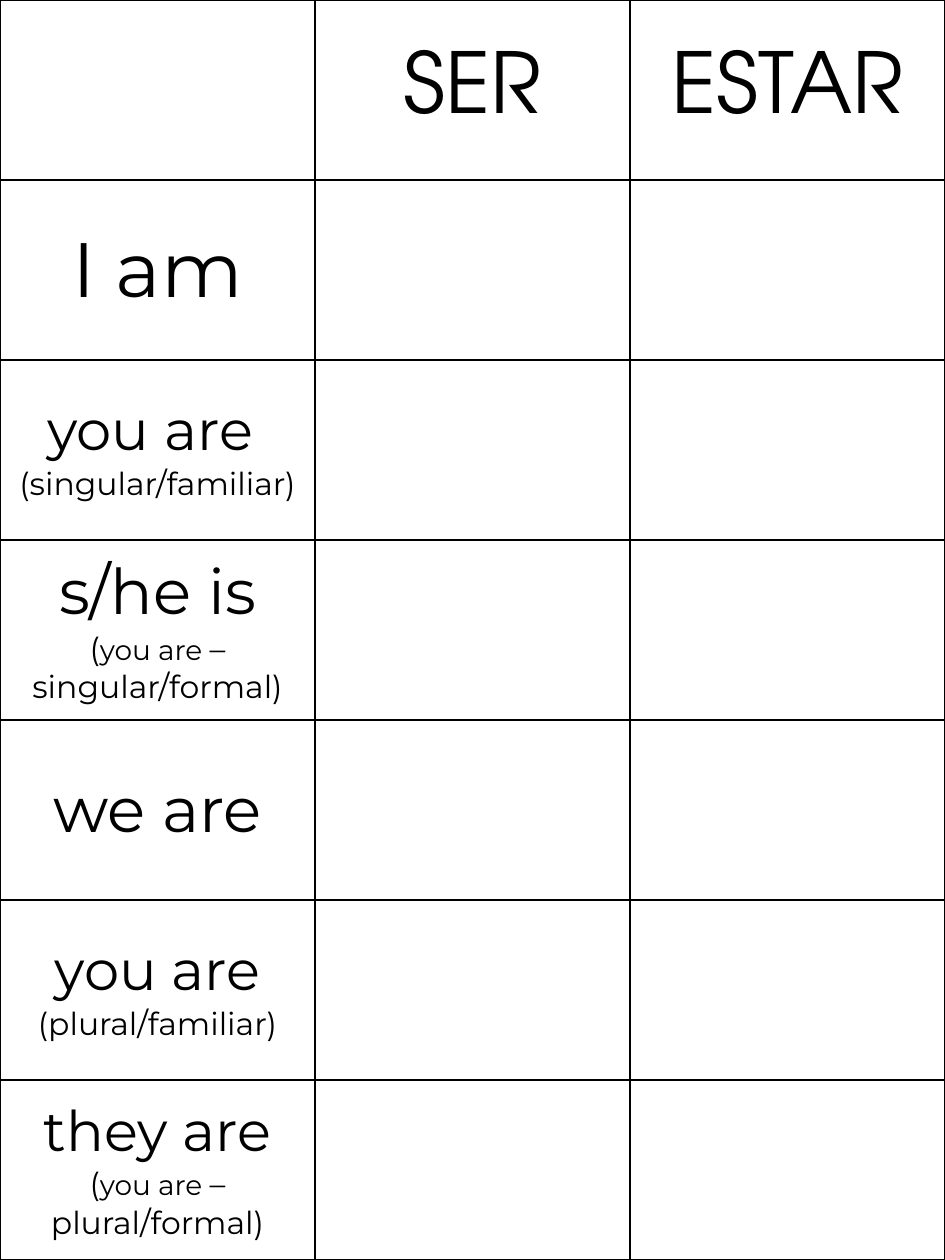
from dataclasses import dataclass

from lxml.etree import SubElement
from pptx import Presentation
from pptx.dml.color import RGBColor
from pptx.enum.text import MSO_ANCHOR as Anchor, PP_ALIGN as Align
from pptx.oxml.ns import qn
from pptx.util import Emu, Pt

SCALE = 914400 / 126
WIDTH, HEIGHT = 945, 1260
COLS, ROWS = 3, 7
BLACK = RGBColor(0, 0, 0)
HEAD_FONT, BODY_FONT = "TeX Gyre Adventor", "Montserrat"


@dataclass(frozen=True)
class Part:
    text: str
    size: int


@dataclass(frozen=True)
class Label:
    row: int
    col: int
    font: str
    lines: tuple[tuple[Part, ...], ...]


def px(count: int) -> Emu:
    return Emu(round(count * SCALE))


def title(col: int, text: str) -> Label:
    return Label(0, col, HEAD_FONT, ((Part(text, 48),),))


def person(row: int, text: str, size: int, *note: Part) -> Label:
    lines = ((Part(text, size),),)
    return Label(row, 0, BODY_FONT, lines + ((note,) if note else ()))


def formal(number: str) -> tuple[Part, ...]:
    return Part("(", 18), Part("you are ", 16), Part(f"– {number}/formal)", 18)


LABELS = [
    title(1, "SER"),
    title(2, "ESTAR"),
    person(1, "I am", 44),
    person(2, "you are ", 32, Part("(singular/familiar)", 18)),
    person(3, "s/he is", 36, *formal("singular")),
    person(4, "we are", 36),
    person(5, "you are", 32, Part("(plural/familiar)", 18)),
    person(6, "they are", 32, *formal("plural")),
]


def frame(cell) -> None:
    """Give the cell thin black borders and no fill."""
    props = cell._tc.get_or_add_tcPr()
    for side in ("lnL", "lnR", "lnT", "lnB"):
        line = SubElement(props, qn(f"a:{side}"), w=str(Pt(1)))
        fill = SubElement(line, qn("a:solidFill"))
        SubElement(fill, qn("a:srgbClr"), val=str(BLACK))
    cell.fill.background()
    cell.vertical_anchor = Anchor.MIDDLE


def write(cell, label: Label) -> None:
    para = cell.text_frame.paragraphs[0]
    para.alignment = Align.CENTER
    for num, line in enumerate(label.lines):
        if num:
            para.add_line_break()
        for part in line:
            run = para.add_run()
            run.text = part.text
            style = {"name": label.font, "size": Pt(part.size), "bold": False}
            for key, value in style.items():
                setattr(run.font, key, value)
            run.font.color.rgb = BLACK


def main() -> None:
    deck = Presentation()
    deck.slide_width, deck.slide_height = px(WIDTH), px(HEIGHT)
    slide = deck.slides.add_slide(deck.slide_layouts[6])
    grid = slide.shapes.add_table(ROWS, COLS, 0, 0, px(WIDTH), px(HEIGHT)).table
    for key in ("first_row", "horz_banding"):
        setattr(grid, key, False)
    for cell in grid.iter_cells():
        frame(cell)
    for label in LABELS:
        write(grid.cell(label.row, label.col), label)
    deck.save("out.pptx")


if __name__ == "__main__":
    main()
